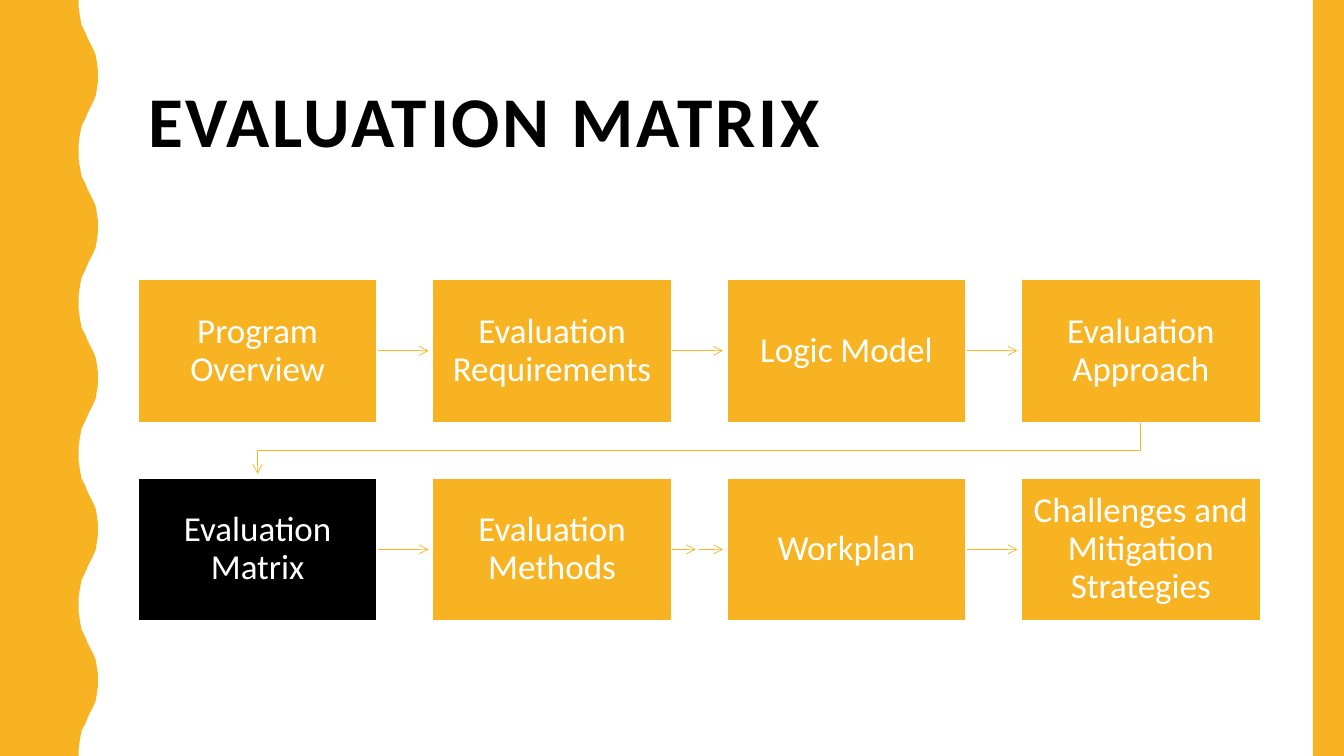
from lxml.etree import SubElement
from pptx import Presentation
from pptx.dml.color import RGBColor
from pptx.enum.shapes import MSO_CONNECTOR, MSO_SHAPE
from pptx.enum.text import MSO_ANCHOR, PP_ALIGN
from pptx.oxml.ns import qn
from pptx.util import Inches, Pt

GOLD = RGBColor(0xF8, 0xB3, 0x23)
BLACK = RGBColor(0, 0, 0)
WHITE = RGBColor(255, 255, 255)
FONT = "Calibri"
LEFT, TOP = 1.37, 2.77
WIDTH, HEIGHT = 2.37, 1.42
STEP_X, STEP_Y = 2.92, 1.97
REACH = 0.51
CURVE = [(0.78, 0), (0.78, 0.07), (0.79, 0.14), (0.8, 0.2), (0.81, 0.25),
         (0.83, 0.29), (0.85, 0.33), (0.87, 0.38), (0.89, 0.42), (0.91, 0.46),
         (0.93, 0.5), (0.95, 0.55), (0.96, 0.61), (0.97, 0.68), (0.97, 0.75)]
STEPS = [
    ["Program Overview", "Evaluation Requirements", "Logic Model", "Evaluation Approach"],
    ["Evaluation Matrix", "Evaluation Methods", "Workplan",
     "Challenges and Mitigation Strategies"],
]
ACTIVE = "Evaluation Matrix"


def paint(shape, fill, edge=None):
    """Give a shape a flat fill and an optional outline."""
    shape.shadow.inherit = False
    shape.fill.solid()
    shape.fill.fore_color.rgb = fill
    if edge is None:
        shape.line.fill.background()
    else:
        shape.line.color.rgb = edge
        shape.line.width = Pt(1)


def write(shape, text, size, color):
    """Write one paragraph, centred vertically in the shape."""
    frame = shape.text_frame
    frame.word_wrap = True
    frame.vertical_anchor = MSO_ANCHOR.MIDDLE
    para = frame.paragraphs[0]
    para.text = text
    para.line_spacing = 0.9
    para.font.name = FONT
    para.font.size = Pt(size)
    para.font.color.rgb = color
    return para


def add_title(slide, text):
    """Add the bold, widely spaced title."""
    box = slide.shapes.add_textbox(Inches(LEFT), Inches(0.42), Inches(11.13), Inches(1.63))
    para = write(box, text, 51, BLACK)
    para.font.bold = True
    para.runs[0]._r.get_or_add_rPr().set("spc", "200")


def add_path(slide, points, close):
    """Add an outline through points given in inches."""
    spots = [(Inches(x), Inches(y)) for x, y in points]
    path = slide.shapes.build_freeform(*spots[0])
    path.add_line_segments(spots[1:], close=close)
    return path.convert_to_shape()


def add_wave(slide):
    """Add the left band with its wavy edge."""
    cycle = CURVE + [(x, 1.5 - y) for x, y in CURVE[-2:0:-1]]
    edge = [(x, y + 1.5 * turn) for turn in range(5) for x, y in cycle]
    points = [(0, 0)] + edge + [(0.78, 7.5), (0, 7.5)]
    paint(add_path(slide, points, True), GOLD)


def add_bar(slide):
    """Add the right band."""
    bar = slide.shapes.add_shape(
        MSO_SHAPE.RECTANGLE, Inches(13.02), 0, Inches(0.31), Inches(7.5))
    paint(bar, GOLD)


def style_arrow(shape):
    """Draw a line thin and gold with an open arrowhead."""
    shape.line.color.rgb = GOLD
    shape.line.width = Pt(0.5)
    SubElement(shape.line._get_or_add_ln(), qn("a:tailEnd"), type="arrow")


def add_arrow(slide, start, end, y):
    """Add a level arrow."""
    line = slide.shapes.add_connector(
        MSO_CONNECTOR.STRAIGHT, Inches(start), Inches(y), Inches(end), Inches(y))
    style_arrow(line)
    SubElement(line._element.spPr, qn("a:effectLst"))


def add_return(slide):
    """Add the bent arrow from the first row to the second."""
    first = LEFT + WIDTH / 2
    last = first + 3 * STEP_X
    points = [(last, TOP + HEIGHT), (last, 4.47), (first, 4.47), (first, 4.7)]
    bend = add_path(slide, points, False)
    bend.shadow.inherit = False
    bend.fill.background()
    style_arrow(bend)


def add_step(slide, text, left, top):
    """Add one step box, black when active."""
    box = slide.shapes.add_shape(
        MSO_SHAPE.RECTANGLE, Inches(left), Inches(top), Inches(WIDTH), Inches(HEIGHT))
    paint(box, BLACK if text == ACTIVE else GOLD, WHITE)
    para = write(box, text, 25, WHITE)
    para.alignment = PP_ALIGN.CENTER
    frame = box.text_frame
    frame.margin_left = frame.margin_right = Inches(0.12)
    frame.margin_top = frame.margin_bottom = Inches(0.12)


def add_flow(slide):
    """Add both rows of steps and the arrows between them."""
    add_return(slide)
    for row, names in enumerate(STEPS):
        top = TOP + row * STEP_Y
        mid = top + HEIGHT / 2
        for col, name in enumerate(names):
            left = LEFT + col * STEP_X
            start = left + WIDTH
            end = start + REACH
            if name == "Evaluation Methods":
                add_arrow(slide, start, start + 0.24, mid)
                add_arrow(slide, end - 0.24, end, mid)
            elif col < len(names) - 1:
                add_arrow(slide, start, end, mid)
            add_step(slide, name, left, top)


def main():
    """Build and save the slide."""
    deck = Presentation()
    deck.slide_width = Inches(13.33)
    deck.slide_height = Inches(7.5)
    slide = deck.slides.add_slide(deck.slide_layouts[6])
    add_title(slide, "EVALUATION MATRIX")
    add_wave(slide)
    add_bar(slide)
    add_flow(slide)
    deck.save("out.pptx")


if __name__ == "__main__":
    main()
